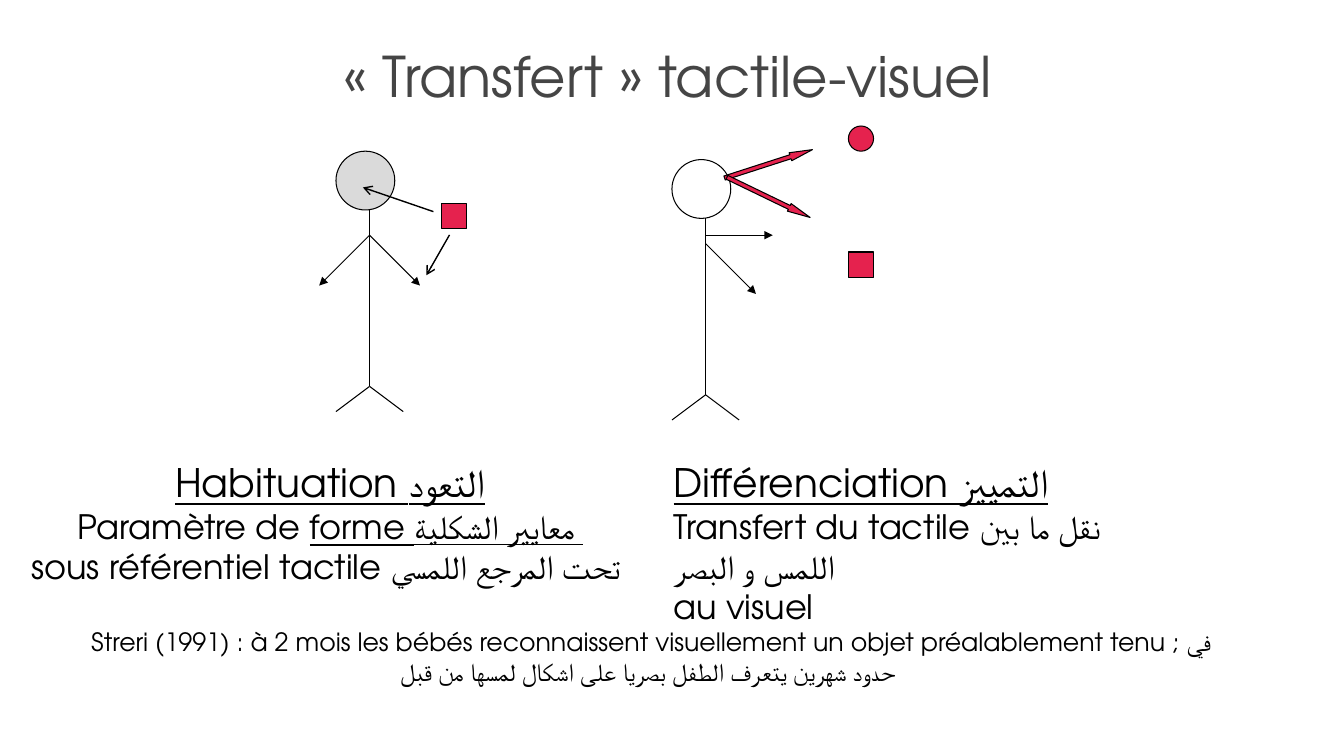
from lxml.etree import SubElement
from pptx import Presentation
from pptx.dml.color import RGBColor
from pptx.enum.shapes import MSO_CONNECTOR, MSO_SHAPE
from pptx.enum.text import MSO_ANCHOR, PP_ALIGN
from pptx.oxml.ns import qn
from pptx.util import Pt

FONT = "TeX Gyre Adventor"
COLORS = {"black": "000000", "title": "454545", "red": "E5224E",
          "grey": "DADADA", "white": "FFFFFF"}

TITLE = "« Transfert » tactile-visuel"

# Each paragraph is a list of runs: (text, size, underlined)
HABITUATION = [
    [("Habituation التعود", 28, True)],
    [("Paramètre de ", 24, False), ("forme معايير الشكلية ", 24, True)],
    [("sous référentiel tactile تحت المرجع اللمسي ", 24, False)],
]
DIFFERENCIATION = [
    [("Différenciation التمييز", 28, True)],
    [("Transfert du tactile نقل ما بين اللمس و البصر", 24, False)],
    [("au visuel", 24, False)],
]
STRERI = [[("Streri (1991) : à 2 mois les bébés reconnaissent visuellement "
            "un objet préalablement tenu ; في حدود شهرين يتعرف الطفل "
            "بصريا على اشكال لمسها من قبل ", 18, False)]]

TEXTS = [  # left, top, width, height, alignment, paragraphs
    (10.8, 324, 450, 99.4, PP_ALIGN.CENTER, HABITUATION),
    (474, 324, 337, 186.5, PP_ALIGN.LEFT, DIFFERENCIATION),
    (43.2, 443.5, 843.8, 77, PP_ALIGN.CENTER, STRERI),
]

# Spine x, head top, head fill, arms as (shoulder drop, dx, dy)
FIGURES = [
    (264, 108, "grey", [(60, -36, 36), (60, 36, 36)]),
    (504, 114, "white", [(60, 36, 36), (54, 48, 0)]),
]
HEAD, SPINE = 42, 126
FOOT_DX, FOOT_DY = 24, 18

OBJECT = 18
OBJECTS = [  # shape, left, top
    (MSO_SHAPE.RECTANGLE, 315.4, 145.4),
    (MSO_SHAPE.RECTANGLE, 606, 180),
    (MSO_SHAPE.OVAL, 606, 90),
]
GAZES = [(114, 342.1), (138, 25.8)]  # top, rotation
TOUCH_ARROWS = [(309.6, 151.2, 259.2, 133.9), (321.1, 167.8, 304.6, 196.6)]


def color(name):
    return RGBColor.from_string(COLORS[name])


def add_filled(s, kind, left, top, width, height, fill):
    shape = s.shapes.add_shape(kind, Pt(left), Pt(top), Pt(width), Pt(height))
    shape.shadow.inherit = False
    shape.fill.solid()
    shape.fill.fore_color.rgb = color(fill)
    shape.line.color.rgb = color("black")
    shape.line.width = Pt(0.75)
    return shape


def add_line(s, x1, y1, x2, y2, tail=None, width=0.75):
    line = s.shapes.add_connector(MSO_CONNECTOR.STRAIGHT,
                                  Pt(x1), Pt(y1), Pt(x2), Pt(y2))
    line.line.color.rgb = color("black")
    line.line.width = Pt(width)
    spPr = line._element.spPr
    if tail:
        SubElement(spPr.find(qn("a:ln")), qn("a:tailEnd"), type=tail)
    SubElement(spPr, qn("a:effectLst"))


def add_figure(s, x, top, fill, arms):
    neck = top + HEAD
    hip = neck + SPINE
    add_filled(s, MSO_SHAPE.OVAL, x - FOOT_DX, top, HEAD, HEAD, fill)
    add_line(s, x, neck, x, hip)
    for drop, dx, dy in arms:
        add_line(s, x, top + drop, x + dx, top + drop + dy, "triangle")
    for dx in (-FOOT_DX, FOOT_DX):
        add_line(s, x, hip, x + dx, hip + FOOT_DY)


def add_run(p, text, size, name, underlined=False):
    r = p.add_run()
    r.text = text
    r.font.name = FONT
    r.font.size = Pt(size)
    r.font.underline = underlined
    r.font.color.rgb = color(name)


def add_text(s, left, top, width, height, align, paragraphs):
    tf = s.shapes.add_textbox(Pt(left), Pt(top), Pt(width), Pt(height)).text_frame
    tf.word_wrap = True
    for i, runs in enumerate(paragraphs):
        p = tf.add_paragraph() if i else tf.paragraphs[0]
        p.alignment = align
        for text, size, underlined in runs:
            add_run(p, text, size, "black", underlined)


def main():
    prs = Presentation()
    prs.slide_width, prs.slide_height = Pt(960), Pt(540)
    s = prs.slides.add_slide(prs.slide_layouts[5])

    title = s.shapes.title
    title.left, title.top = Pt(230.4), Pt(26)
    title.width, title.height = Pt(493.2), Pt(55.5)
    tf = title.text_frame
    tf.vertical_anchor = MSO_ANCHOR.MIDDLE
    p = tf.paragraphs[0]
    p.alignment = PP_ALIGN.CENTER
    add_run(p, TITLE, 40, "title")

    for figure in FIGURES:
        add_figure(s, *figure)
    for kind, left, top in OBJECTS:
        add_filled(s, kind, left, top, OBJECT, OBJECT, "red")
    for top, rotation in GAZES:
        gaze = add_filled(s, MSO_SHAPE.RIGHT_ARROW, 516, top, 66, 6, "red")
        gaze.adjustments[1] = 2.75
        gaze.rotation = rotation
    for ends in TOUCH_ARROWS:
        add_line(s, *ends, tail="arrow", width=1)
    for text in TEXTS:
        add_text(s, *text)

    prs.save("out.pptx")


if __name__ == "__main__":
    main()
